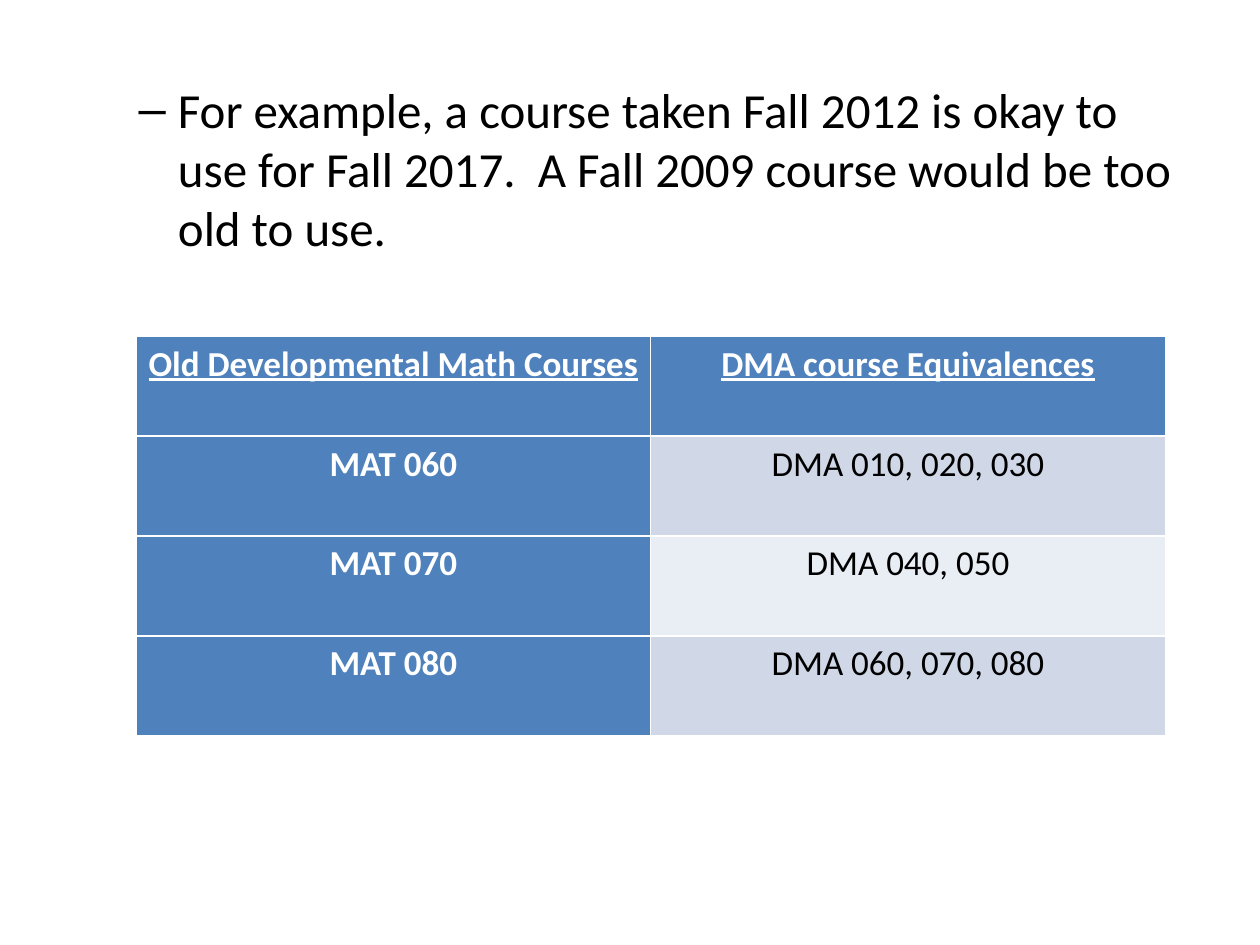
from pptx import Presentation
from pptx.dml.color import RGBColor
from pptx.enum.text import PP_ALIGN
from pptx.util import Inches, Pt

BLACK = RGBColor(0x00, 0x00, 0x00)
WHITE = RGBColor(0xFF, 0xFF, 0xFF)
BLUE = RGBColor(0x4F, 0x81, 0xBD)
BANDS = [RGBColor(0xE9, 0xED, 0xF4), RGBColor(0xD0, 0xD8, 0xE8)]

EXAMPLE = ("For example, a course taken Fall 2012 is okay to use for Fall 2017.  "
           "A Fall 2009 course would be too old to use.")
COURSES = [
    ("Old Developmental Math Courses", "DMA course Equivalences"),
    ("MAT 060", "DMA 010, 020, 030"),
    ("MAT 070", "DMA 040, 050"),
    ("MAT 080", "DMA 060, 070, 080"),
]
BODY_AREA = (0.5, 0.58, 9, 6.12)
TABLE_AREA = (1.08, 2.67, 8.17, 3.17)
CELL_MARGINS = {"margin_left": Inches(0.07), "margin_right": Inches(0.07),
                "margin_top": 0, "margin_bottom": 0}


def apply(target, values):
    for name, value in values.items():
        setattr(target, name, value)


def add_example(page):
    body = page.placeholders[1]
    apply(body, dict(zip(("left", "top", "width", "height"), map(Inches, BODY_AREA))))
    para = body.text_frame.paragraphs[0]
    para.level = 1
    span = para.add_run()
    span.text = EXAMPLE
    apply(span.font, {"name": "Calibri", "size": Pt(28)})
    span.font.color.rgb = BLACK


def add_courses(page):
    frame = page.shapes.add_table(len(COURSES), len(COURSES[0]), *map(Inches, TABLE_AREA))
    table = frame.table
    table.first_col = True
    for row, texts in enumerate(COURSES):
        for column, text in enumerate(texts):
            is_heading = row == 0 or column == 0
            cell = table.cell(row, column)
            apply(cell, CELL_MARGINS)
            cell.fill.solid()
            cell.fill.fore_color.rgb = BLUE if is_heading else BANDS[row % 2]
            para = cell.text_frame.paragraphs[0]
            apply(para, {"alignment": PP_ALIGN.CENTER, "line_spacing": 1.15})
            span = para.add_run()
            span.text = text
            apply(span.font, {"name": "Calibri", "size": Pt(20),
                              "bold": is_heading, "underline": row == 0})
            span.font.color.rgb = WHITE if is_heading else BLACK


def main():
    """Build the slide on old math courses and their DMA equivalences."""
    deck = Presentation()
    apply(deck, {"slide_width": Inches(10), "slide_height": Inches(7.5)})
    page = deck.slides.add_slide(deck.slide_layouts[1])
    title = page.shapes.title.element
    title.getparent().remove(title)
    add_example(page)
    add_courses(page)
    deck.save("out.pptx")


if __name__ == "__main__":
    main()
